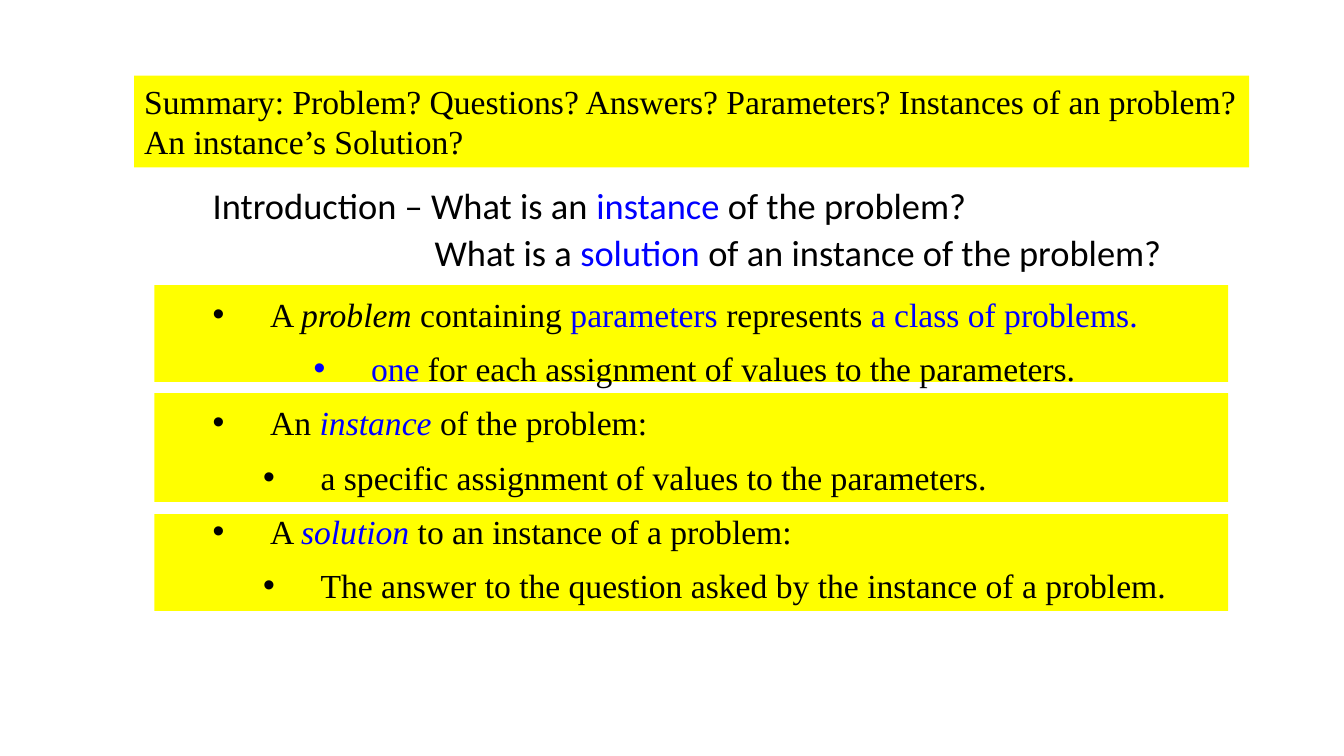
from dataclasses import dataclass

from lxml.etree import SubElement
from pptx import Presentation
from pptx.dml.color import RGBColor
from pptx.enum.shapes import MSO_SHAPE
from pptx.enum.text import MSO_ANCHOR, MSO_AUTO_SIZE, PP_ALIGN
from pptx.oxml.ns import qn
from pptx.util import Inches, Pt


@dataclass(frozen=True)
class Theme:
    text: RGBColor = RGBColor(0, 0, 0)
    accent: RGBColor = RGBColor(0, 0, 255)
    band: RGBColor = RGBColor(255, 255, 0)
    intro_font: str = "Calibri"
    body_font: str = "Times New Roman"
    intro_size: int = 26
    body_size: int = 24
    line_spacing: float = 1.07
    hanging: float = 0.57


class SummarySlide:
    def __init__(self, presentation, theme):
        self.theme = theme
        self.slide = presentation.slides.add_slide(presentation.slide_layouts[1])
        self.body = self.slide.placeholders[1]

    def place(self, shape, left, top, width, height):
        shape.left, shape.top = Inches(left), Inches(top)
        shape.width, shape.height = Inches(width), Inches(height)
        shape.text_frame.word_wrap = True
        shape.text_frame.auto_size = MSO_AUTO_SIZE.NONE

    def style(self, paragraph, name, size):
        paragraph.alignment = PP_ALIGN.LEFT
        paragraph.space_before = Pt(0)
        paragraph.font.name = name
        paragraph.font.size = Pt(size)
        paragraph.font.color.rgb = self.theme.text

    def title(self, text, *box):
        title = self.slide.shapes.title
        self.place(title, *box)
        title.fill.solid()
        title.fill.fore_color.rgb = self.theme.band
        title.text_frame.vertical_anchor = MSO_ANCHOR.TOP
        title.text_frame.text = text
        self.style(title.text_frame.paragraphs[0], self.theme.body_font, self.theme.body_size)

    def band(self, *box):
        shape = self.slide.shapes.add_shape(MSO_SHAPE.RECTANGLE, *map(Inches, box))
        shape.shadow.inherit = False
        shape.fill.solid()
        shape.fill.fore_color.rgb = self.theme.band
        shape.line.fill.background()
        self.body.element.addprevious(shape.element)

    def paragraph(self, runs, name, size, margin, indent, bullet=None, level=0, after=0):
        frame = self.body.text_frame
        paragraph = frame.paragraphs[0]
        if paragraph.runs:
            paragraph = frame.add_paragraph()
        paragraph.level = level
        properties = paragraph._p.get_or_add_pPr()
        properties.set("marL", str(Inches(margin)))
        properties.set("indent", str(Inches(indent)))
        if bullet:
            SubElement(properties, qn("a:buFont")).set("typeface", "Arial")
            SubElement(properties, qn("a:buChar")).set("char", bullet)
        else:
            SubElement(properties, qn("a:buNone"))
        self.style(paragraph, name, size)
        paragraph.line_spacing = self.theme.line_spacing
        paragraph.space_after = Pt(after)
        for text, marks in runs:
            run = paragraph.add_run()
            run.text = text
            if "accent" in marks:
                run.font.color.rgb = self.theme.accent
            if "italic" in marks:
                run.font.italic = True

    def intro(self, runs, margin=0, after=0):
        self.paragraph(runs, self.theme.intro_font, self.theme.intro_size, margin, 0, after=after)

    def bullet(self, level, runs):
        hanging = self.theme.hanging
        self.paragraph(runs, self.theme.body_font, self.theme.body_size,
                       hanging + level * 0.5, -hanging, "•", level, 8)


def main():
    presentation = Presentation()
    presentation.slide_width = Inches(13.33)
    presentation.slide_height = Inches(7.5)
    summary = SummarySlide(presentation, Theme())

    for top, height in ((2.83, 0.96), (3.9, 1.08), (5.1, 0.96)):
        summary.band(1.53, top, 10.65, height)

    summary.title("Summary: Problem? Questions? Answers? Parameters? "
                  "Instances of an problem? An instance’s Solution?",
                  1.33, 0.75, 11.06, 0.91)

    summary.place(summary.body, 2.01, 1.74, 9.93, 4.33)
    summary.intro([("Introduction – What is an ", ""), ("instance ", "accent"),
                   ("of the problem?", "")])
    summary.intro([("What is a ", ""), ("solution", "accent"),
                   (" of an instance of the problem?", "")], margin=2.2, after=12)

    bullets = [
        (0, [("A ", ""), ("problem", "italic"), (" containing ", ""),
             ("parameters", "accent"), (" represents ", ""),
             ("a class of problems.", "accent")]),
        (2, [("one", "accent"), (" for each assignment of values to the parameters.", "")]),
        (0, [("An ", ""), ("instance", "accent italic"), (" of the problem:", "")]),
        (1, [("a specific assignment of values to the parameters.", "")]),
        (0, [("A ", ""), ("solution ", "accent italic"),
             ("to an instance of a problem:", "")]),
        (1, [("The answer to the question asked by the instance of a problem.", "")]),
    ]
    for level, runs in bullets:
        summary.bullet(level, runs)

    presentation.save("out.pptx")


if __name__ == "__main__":
    main()
